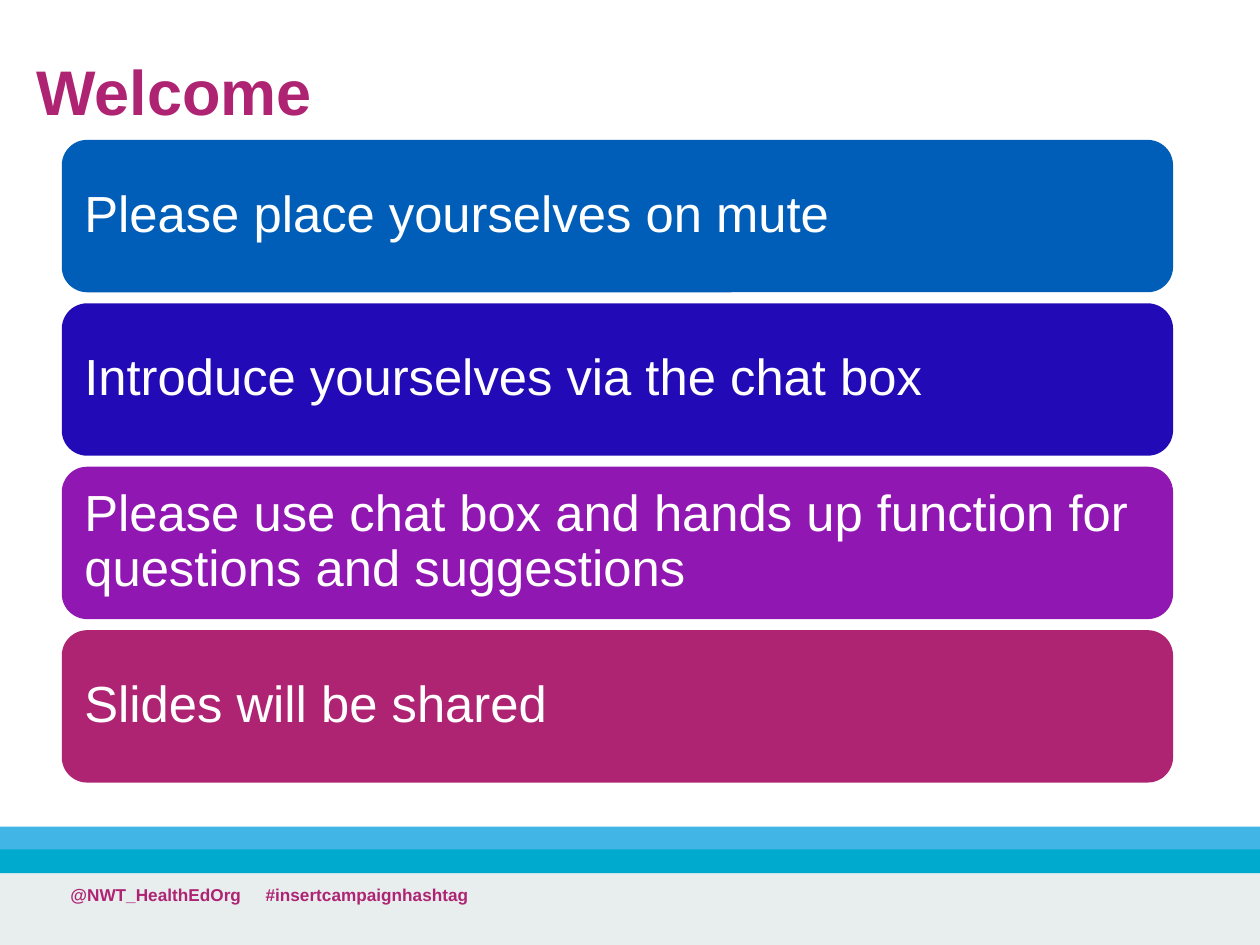
from lxml.etree import SubElement
from pptx import Presentation
from pptx.dml.color import RGBColor
from pptx.enum.shapes import MSO_SHAPE
from pptx.enum.text import MSO_ANCHOR, PP_ALIGN
from pptx.oxml.ns import qn
from pptx.util import Inches, Pt

MAGENTA = "AE2473"
WHITE = "FFFFFF"


def color(value):
    return RGBColor.from_string(value)


def add_block(slide, kind, left, top, width, height, fill):
    shape = slide.shapes.add_shape(
        kind, Inches(left), Inches(top), Inches(width), Inches(height))
    shape.shadow.inherit = False
    shape.fill.solid()
    shape.fill.fore_color.rgb = color(fill)
    shape.line.fill.background()
    return shape


def write_text(shape, text, size, fill, bold=False, anchor=MSO_ANCHOR.MIDDLE,
               line_spacing=None, side_margin=0.1, end_margin=0.05):
    frame = shape.text_frame
    frame.word_wrap = True
    frame.vertical_anchor = anchor
    frame.margin_left = frame.margin_right = Inches(side_margin)
    frame.margin_top = frame.margin_bottom = Inches(end_margin)
    paragraph = frame.paragraphs[0]
    paragraph.alignment = PP_ALIGN.LEFT
    if line_spacing:
        paragraph.line_spacing = line_spacing
    run = paragraph.add_run()
    run.text = text
    run.font.name = "Arial"
    run.font.size = Pt(size)
    run.font.bold = bold
    run.font.color.rgb = color(fill)
    return paragraph


def add_text_box(slide, left, top, width, height, text, **text_format):
    box = slide.shapes.add_textbox(
        Inches(left), Inches(top), Inches(width), Inches(height))
    return write_text(box, text, **text_format)


def add_tab_stop(paragraph, position):
    properties = paragraph._p.get_or_add_pPr()
    tab_list = SubElement(properties, qn("a:tabLst"))
    SubElement(tab_list, qn("a:tab"), pos=str(Inches(position)), algn="l")


def add_footer(slide):
    bands = [(6.93, 0.57, "E8EDEE"), (6.56, 0.19, "41B6E6"), (6.74, 0.19, "00A9CE")]
    for top, height, fill in bands:
        add_block(slide, MSO_SHAPE.RECTANGLE, 0, top, 10, height, fill)
    paragraph = add_text_box(
        slide, 0.46, 6.97, 5.84, 0.53, "@NWT_HealthEdOrg\t#insertcampaignhashtag",
        size=9.8, fill=MAGENTA, bold=True, anchor=MSO_ANCHOR.TOP)
    add_tab_stop(paragraph, 1.55)


def add_message_cards(slide):
    messages = [
        ("Please place yourselves on mute", "005EB8"),
        ("Introduce yourselves via the chat box", "220BB6"),
        ("Please use chat box and hands up function for questions and suggestions",
         "9017B2"),
        ("Slides will be shared", MAGENTA),
    ]
    first_top, pitch = 1.11, 1.297
    for index, (message, fill) in enumerate(messages):
        card = add_block(slide, MSO_SHAPE.ROUNDED_RECTANGLE, 0.49,
                         first_top + index * pitch, 8.82, 1.21, fill)
        write_text(card, message, size=29, fill=WHITE, line_spacing=0.9,
                   side_margin=0.12, end_margin=0.12)


def main():
    presentation = Presentation()
    presentation.slide_width = Inches(10)
    presentation.slide_height = Inches(7.5)
    slide = presentation.slides.add_slide(presentation.slide_layouts[6])

    # Footer bands and handles
    add_footer(slide)

    # Title
    add_text_box(slide, 0.19, 0.31, 6.47, 0.89, "Welcome",
                 size=36, fill=MAGENTA, bold=True, line_spacing=0.9)

    # Housekeeping messages
    add_message_cards(slide)

    presentation.save("out.pptx")


if __name__ == "__main__":
    main()
